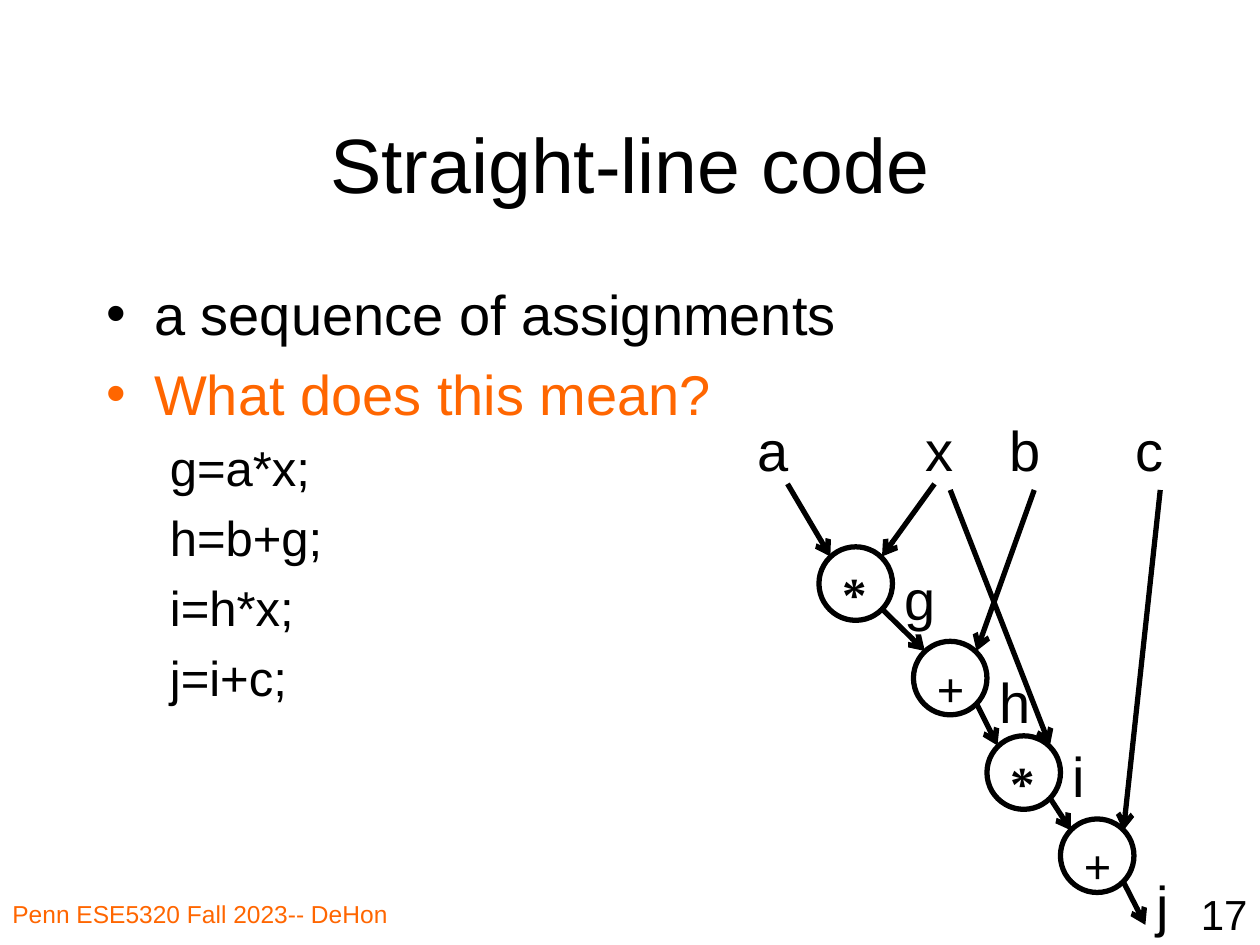
from pptx import Presentation
from pptx.dml.color import RGBColor as Rgb
from pptx.enum.shapes import MSO_CONNECTOR as Link, MSO_SHAPE as Form
from pptx.enum.text import MSO_ANCHOR as Anchor, PP_ALIGN as Align
from pptx.oxml.ns import qn
from pptx.util import Pt
from lxml.etree import SubElement as Sub

HUES = {"ink": "000000", "fire": "FF6600"}


class Deck:
    """Style and current slide, with a method for each kind of element."""

    def __init__(self, wide, high):
        self.show = Presentation()
        self.show.slide_width, self.show.slide_height = Pt(wide), Pt(high)
        self.slide = self.show.slides.add_slide(self.show.slide_layouts[6])
        self.face, self.width = "Arial", Pt(3)

    def hue(self, name):
        return Rgb.from_string(HUES[name])

    def phrase(self, para, words, size, hue="ink", **more):
        run = para.add_run()
        run.text = words
        form = {"name": self.face, "size": Pt(size), "bold": False, **more}
        for key, value in form.items():
            setattr(run.font, key, value)
        run.font.color.rgb = self.hue(hue)

    def frame(self, box):
        text = self.slide.shapes.add_textbox(*map(Pt, box)).text_frame
        text.word_wrap = True
        return text

    def label(self, box, words, size, hue="ink", align=Align.LEFT, anchor=Anchor.TOP):
        text = self.frame(box)
        text.vertical_anchor = anchor
        para = text.paragraphs[0]
        para.alignment = align
        self.phrase(para, words, size, hue)

    def body(self, box, rows):
        text = self.frame(box)
        for spot, (words, size, hue, left, hang, mark) in enumerate(rows):
            para = text.add_paragraph() if spot else text.paragraphs[0]
            para.space_before = Pt(round(size * 0.23, 1))
            props = para._p.get_or_add_pPr()
            for key, value in {"marL": left, "indent": -hang}.items():
                props.set(key, str(Pt(value)))
            if mark:
                Sub(props, qn("a:buFont")).set("typeface", self.face)
                Sub(props, qn("a:buChar")).set("char", mark)
            else:
                Sub(props, qn("a:buNone"))
            self.phrase(para, words, size, hue)

    def node(self, left, top, sign):
        shape = self.slide.shapes.add_shape(Form.OVAL, Pt(left), Pt(top), Pt(42), Pt(42))
        shape.shadow.inherit = False
        shape.fill.background()
        shape.line.color.rgb = self.hue("ink")
        shape.line.width = self.width
        text = shape.text_frame
        text.vertical_anchor = Anchor.TOP
        para = text.paragraphs[0]
        para.alignment = Align.LEFT
        self.phrase(para, sign, 28, name="Times New Roman", bold=True)

    def arrow(self, *ends):
        edge = self.slide.shapes.add_connector(Link.STRAIGHT, *map(Pt, ends))
        edge.line.color.rgb = self.hue("ink")
        edge.line.width = self.width
        Sub(edge.line._get_or_add_ln(), qn("a:tailEnd")).set("type", "arrow")
        Sub(edge._element.spPr, qn("a:effectLst"))


def main():
    deck = Deck(720, 540)
    deck.label((0, 510, 276, 30), "Penn ESE5320 Fall 2023-- DeHon", 14, "fire")
    deck.label((570, 504, 150, 36), "17", 24, align=Align.RIGHT)
    deck.label((54, 48, 612, 90), "Straight-line code", 44,
               align=Align.CENTER, anchor=Anchor.MIDDLE)
    points = [("a sequence of assignments", "ink"), ("What does this mean?", "fire")]
    code = ["g=a*x;", "h=b+g;", "i=h*x;", "j=i+c;"]
    deck.body((54, 156, 444, 324),
              [(words, 32, hue, 27, 27, "•") for words, hue in points]
              + [(words, 28, "ink", 58.5, 22.5, None) for words in code])

    inputs = [("a", 426), ("x", 522), ("b", 570), ("c", 642)]
    results = [("g", 510, 319), ("h", 564, 378), ("i", 606, 420), ("j", 654, 494)]
    for name, left, top in [(name, left, 234) for name, left in inputs] + results:
        deck.label((left, top, 42, 46), name, 32)

    nodes = [(468, 312.5, "*"), (522, 366.5, "+"), (564, 420.5, "*"), (606, 468, "+")]
    for node in nodes:
        deck.node(*node)

    edges = [
        (450, 276.5, 474.5, 318), (534, 276.5, 504, 318),
        (543, 280, 600, 426), (591, 280, 558, 372), (663, 280, 642, 474.5),
        (504, 348, 528.5, 372), (558, 402, 570, 426),
        (600, 456, 612, 474.5), (642, 504, 654.5, 528.5),
    ]
    for edge in edges:
        deck.arrow(*edge)
    deck.show.save("out.pptx")


if __name__ == "__main__":
    main()
